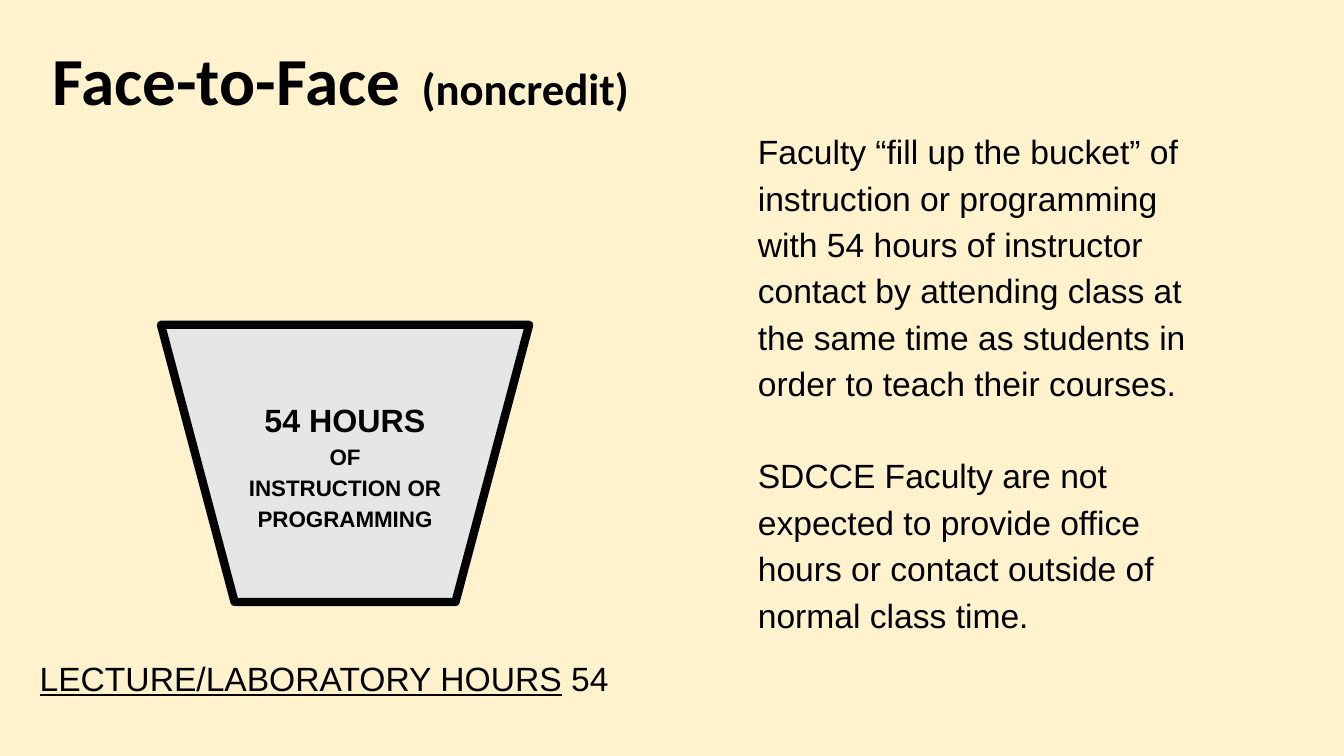
import pptx
import pptx.util
import pptx.dml.color
import pptx.enum.shapes
import pptx.enum.text
from dataclasses import dataclass
from lxml import etree

Pt = pptx.util.Pt
ALIGN = pptx.enum.text.PP_ALIGN
ANCHOR = pptx.enum.text.MSO_ANCHOR
PRESET = pptx.enum.shapes.MSO_SHAPE


@dataclass(frozen=True)
class Theme:
    cream: str = "FFF2CC"
    grey: str = "E7E6E6"
    ink: str = "000000"
    heading: str = "Calibri"
    text: str = "Arial"
    title: int = 48
    subtitle: int = 32
    title_gap: int = 19
    body: int = 24
    bucket: int = 23
    bucket_small: int = 16
    margin: float = 9.36


theme = Theme()


def write(shape, paragraphs, font=theme.text, bold=False, align=ALIGN.LEFT,
          anchor=ANCHOR.TOP, spacing=1.15, gap=0):
    """Each paragraph is a list of (text, size, underlined) runs."""
    frame = shape.text_frame
    frame.word_wrap = True
    frame.auto_size = pptx.enum.text.MSO_AUTO_SIZE.NONE
    frame.vertical_anchor = anchor
    frame.margin_left = frame.margin_right = Pt(theme.margin)
    frame.margin_top = frame.margin_bottom = Pt(theme.margin)
    for index, runs in enumerate(paragraphs):
        paragraph = frame.add_paragraph() if index else frame.paragraphs[0]
        paragraph.alignment = align
        paragraph.line_spacing = spacing
        paragraph.space_before = Pt(gap if index else 0)
        for text, size, underlined in runs:
            run = paragraph.add_run()
            run.text = text
            run.font.name = font
            run.font.size = Pt(size)
            run.font.bold = bold
            run.font.underline = underlined
            run.font.color.rgb = pptx.dml.color.RGBColor.from_string(theme.ink)


def add_filled(preset, left, top, width, height, colour):
    shape = slide.shapes.add_shape(preset, Pt(left), Pt(top), Pt(width), Pt(height))
    shape.shadow.inherit = False
    shape.fill.solid()
    shape.fill.fore_color.rgb = pptx.dml.color.RGBColor.from_string(colour)
    shape.line.fill.background()
    return shape


presentation = pptx.Presentation()
presentation.slide_width = Pt(960)
presentation.slide_height = Pt(540)
slide = presentation.slides.add_slide(presentation.slide_layouts[5])

# Cream backdrop, sent behind the title
backdrop = add_filled(PRESET.RECTANGLE, 0, 0, 960, 540, theme.cream)
slide.shapes.element.insert(2, backdrop.element)

# Title
title = slide.shapes.title
title.left, title.top, title.width, title.height = Pt(28), Pt(37.5), Pt(448), Pt(57.5)
write(title, [[("Face-to-Face ", theme.title, False),
               (" ", theme.title_gap, False),
               ("(noncredit)", theme.subtitle, False)]],
      font=theme.heading, bold=True, anchor=ANCHOR.BOTTOM, spacing=0.9)

# Bucket of hours, with a thick outline and rounded corners
bucket = add_filled(PRESET.FLOWCHART_MANUAL_OPERATION, 115, 232, 263, 198, theme.grey)
bucket.line.color.rgb = pptx.dml.color.RGBColor.from_string(theme.ink)
bucket.line.width = Pt(6)
outline = bucket.element.spPr.find(pptx.oxml.ns.qn("a:ln"))
etree.SubElement(outline, pptx.oxml.ns.qn("a:round"))
write(bucket, [[("54 HOURS", theme.bucket, False)],
               [("OF", theme.bucket_small, False)],
               [("INSTRUCTION OR PROGRAMMING", theme.bucket_small, False)]],
      bold=True, align=ALIGN.CENTER, anchor=ANCHOR.MIDDLE)

# Explanation on the right
explanation = slide.shapes.add_textbox(Pt(532), Pt(80), Pt(352), Pt(380))
write(explanation, [
    [("Faculty “fill up the bucket” of instruction or programming with 54 hours of "
      "instructor contact by attending class at the same time as students in order "
      "to teach their courses.", theme.body, False)],
    [("SDCCE Faculty are not expected to provide office hours or contact outside of "
      "normal class time.", theme.body, False)],
], gap=33)

# Total of hours under the bucket
total = slide.shapes.add_textbox(Pt(19), Pt(460), Pt(456), Pt(44))
write(total, [[("LECTURE/LABORATORY HOURS", theme.body, True),
               (" 54", theme.body, False)]], anchor=ANCHOR.MIDDLE)

presentation.save("out.pptx")
